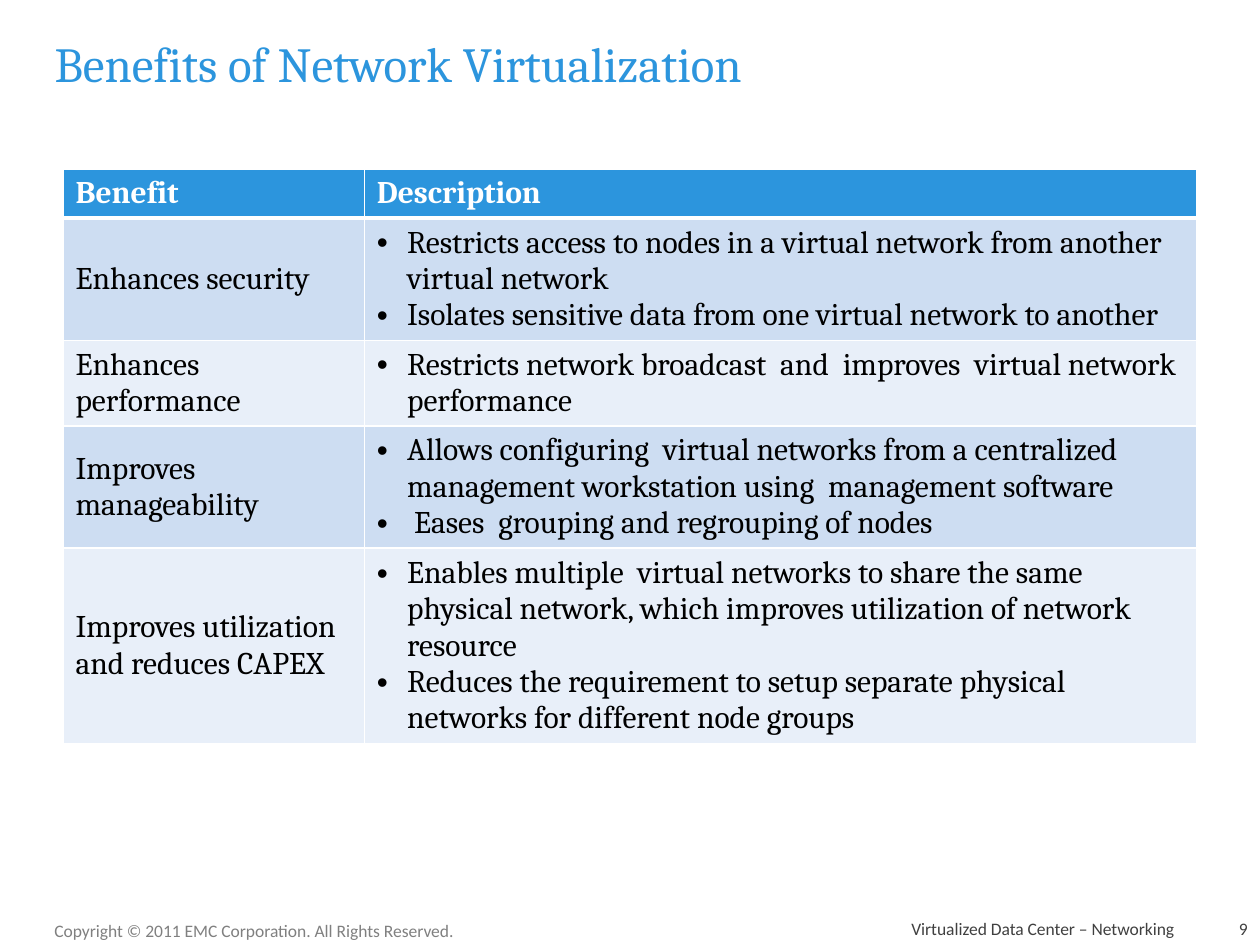
from dataclasses import dataclass

from lxml.etree import SubElement
from pptx import Presentation
from pptx.dml.color import RGBColor
from pptx.enum.text import MSO_ANCHOR, PP_ALIGN
from pptx.oxml import parse_xml
from pptx.oxml.ns import nsdecls, qn
from pptx.util import Inches, Pt


@dataclass(frozen=True)
class Theme:
    blue: str = "2C95DD"
    bands: tuple = ("CDDDF2", "E8EFF9")
    white: str = "FFFFFF"
    black: str = "000000"
    gray: str = "808080"
    dark: str = "404040"
    serif: str = "Cambria"
    sans: str = "Calibri"
    head: int = 28
    body: int = 18
    small: int = 10


def unit(n):
    """Length of n grid cells; the slide is 120 columns by 90 rows."""
    return Inches(n / 12)


class Deck:
    def __init__(self, theme):
        self.theme = theme
        self.prs = Presentation()
        self.prs.slide_width, self.prs.slide_height = unit(120), unit(90)
        self.slide = self.prs.slides.add_slide(self.prs.slide_layouts[5])

    def style(self, para, face, size, color, bold=False):
        for run in para.runs:
            font = run.font
            font.name, font.size, font.bold = face, Pt(size), bold
            font.color.rgb = RGBColor.from_string(color)

    def title(self, text, col, row, wide, high):
        box = self.slide.shapes.title
        box.left, box.top, box.width, box.height = map(unit, (col, row, wide, high))
        frame = box.text_frame
        frame.text = text
        frame.vertical_anchor = MSO_ANCHOR.MIDDLE
        para = frame.paragraphs[0]
        para.alignment = PP_ALIGN.LEFT
        self.style(para, self.theme.serif, self.theme.head, self.theme.blue)

    def note(self, text, col, row, wide, high, color,
             align=PP_ALIGN.RIGHT, anchor=MSO_ANCHOR.BOTTOM):
        box = self.slide.shapes.add_textbox(*map(unit, (col, row, wide, high)))
        frame = box.text_frame
        frame.word_wrap = True
        frame.vertical_anchor = anchor
        frame.text = text
        para = frame.paragraphs[0]
        para.alignment = align
        self.style(para, self.theme.sans, self.theme.small, color)

    def bullet(self, para):
        props = para._p.get_or_add_pPr()
        props.set("marL", str(Inches(0.24)))
        props.set("indent", str(-Inches(0.24)))
        SubElement(props, qn("a:buFont")).set("typeface", "Arial")
        SubElement(props, qn("a:buChar")).set("char", "•")

    def edges(self, cell, base):
        props = cell._tc.get_or_add_tcPr()
        for i, (side, width) in enumerate(zip("LRTB", (1, 1, 1, base))):
            props.insert(i, parse_xml(
                f'<a:ln{side} {nsdecls("a")} w="{Pt(width)}"><a:solidFill>'
                f'<a:srgbClr val="{self.theme.white}"/></a:solidFill></a:ln{side}>'))

    def cell(self, cell, lines, fill, color, bold=False, marks=False, base=1):
        cell.fill.solid()
        cell.fill.fore_color.rgb = RGBColor.from_string(fill)
        cell.vertical_anchor = MSO_ANCHOR.MIDDLE
        self.edges(cell, base)
        cell.text_frame.text = "\n".join(lines)
        for para in cell.text_frame.paragraphs:
            if marks:
                self.bullet(para)
            self.style(para, self.theme.serif, self.theme.body, color, bold)

    def table(self, heads, rows, col, row, widths, line=3.48, pad=1.2):
        theme = self.theme
        highs = [line + pad] + [n * line + pad for _, _, n in rows]
        grid = self.slide.shapes.add_table(
            len(highs), len(widths), unit(col), unit(row),
            unit(sum(widths)), unit(sum(highs))).table
        for part, wide in zip(grid.columns, widths):
            part.width = unit(wide)
        for part, high in zip(grid.rows, highs):
            part.height = unit(high)
        for i, text in enumerate(heads):
            self.cell(grid.cell(0, i), [text], theme.blue, theme.white,
                      bold=True, base=3)
        for i, (name, points, _) in enumerate(rows):
            fill = theme.bands[i % 2]
            self.cell(grid.cell(i + 1, 0), [name], fill, theme.black)
            self.cell(grid.cell(i + 1, 1), points, fill, theme.black, marks=True)


# Benefit, its points, and the text lines the row holds
ROWS = [
    ("Enhances security",
     ["Restricts access to nodes in a virtual network from another virtual network",
      "Isolates sensitive data from one virtual network to another"], 3),
    ("Enhances performance",
     ["Restricts network broadcast  and  improves  virtual network performance"], 2),
    ("Improves manageability",
     ["Allows configuring  virtual networks from a centralized management "
      "workstation using  management software",
      " Eases  grouping and regrouping of nodes"], 3),
    ("Improves utilization and reduces CAPEX",
     ["Enables multiple  virtual networks to share the same physical network, "
      "which improves utilization of network resource",
      "Reduces the requirement to setup separate physical networks for "
      "different node groups"], 5),
]


def main():
    theme = Theme()
    deck = Deck(theme)

    # Title and table
    deck.title("Benefits of Network Virtualization", 4, 1, 111, 10)
    deck.table(("Benefit", "Description"), ROWS, 6, 16.1, (28.7, 79.3))

    # Footer
    deck.note("Copyright © 2011 EMC Corporation. All Rights Reserved.",
              4, 87, 41, 3.2, theme.gray, PP_ALIGN.LEFT, MSO_ANCHOR.TOP)
    deck.note("Virtualized Data Center – Networking", 58, 87, 55, 3, theme.dark)
    deck.note("9", 114, 87, 6, 3, theme.dark)

    deck.prs.save("out.pptx")


if __name__ == "__main__":
    main()
